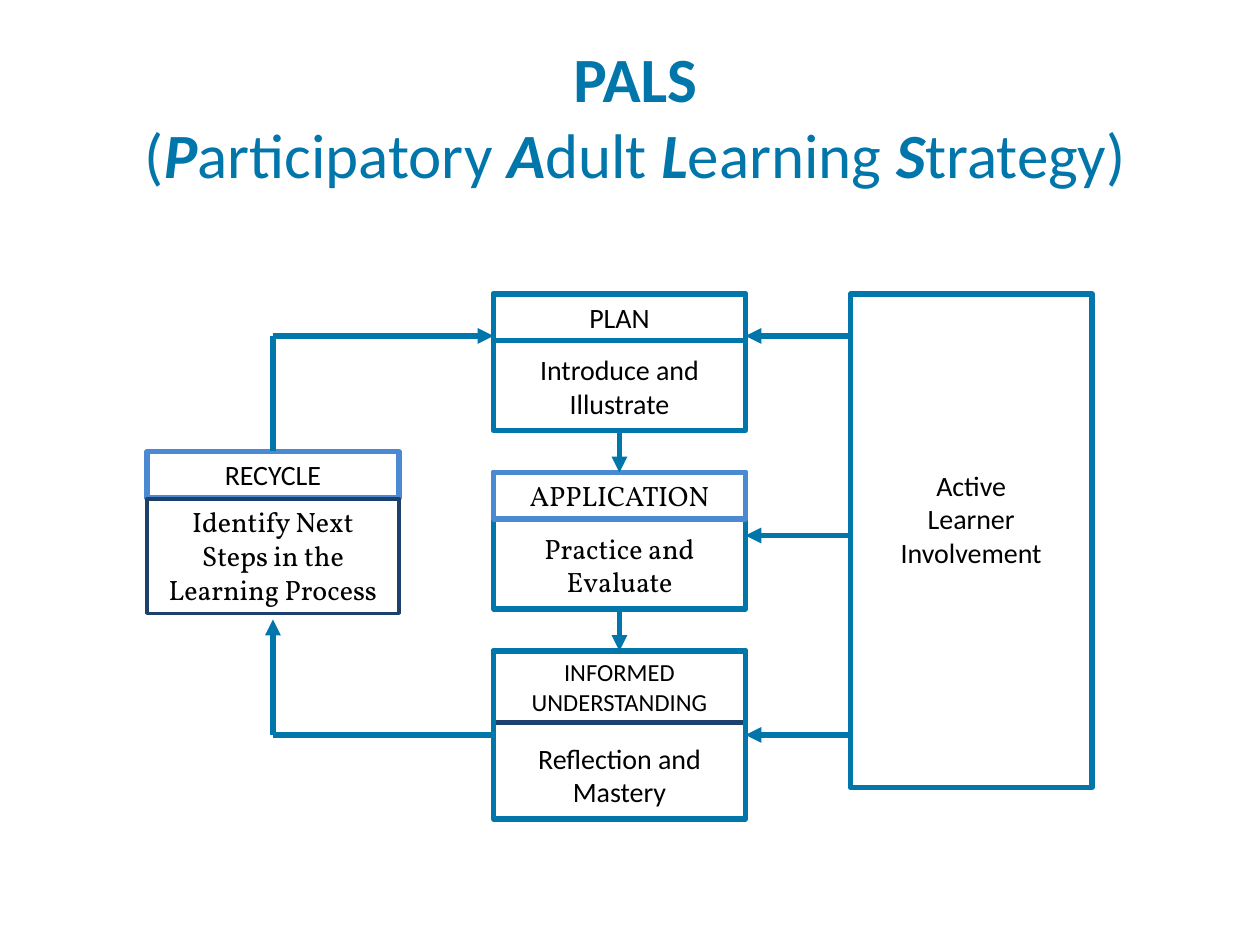
from lxml.etree import SubElement
from pptx import Presentation
from pptx.dml.color import RGBColor
from pptx.enum.shapes import MSO_CONNECTOR as Connector, MSO_SHAPE as Shape
from pptx.enum.text import MSO_ANCHOR as Anchor, PP_ALIGN as Align
from pptx.oxml.ns import qn
from pptx.util import Pt

BLUE = RGBColor(0x00, 0x76, 0xAA)
LIGHT_BLUE = RGBColor(0x4B, 0x8A, 0xD2)
NAVY = RGBColor(0x1B, 0x41, 0x6C)
BLACK = RGBColor(0, 0, 0)

TOP, BOTTOM, LEFT, RIGHT = 0, 2, 1, 3
HEADER_HEIGHT = 26.6
ARROW_LEVELS = (192, 306, 420)


def set_format(target, values):
    for name, value in values.items():
        setattr(target, name, value)


def write(shape, lines, font="Calibri", size=16):
    frame = shape.text_frame
    set_format(frame, {"word_wrap": True, "vertical_anchor": Anchor.TOP})
    for index, line in enumerate(lines):
        para = frame.add_paragraph() if index else frame.paragraphs[0]
        para.alignment = Align.CENTER
        span = para.add_run()
        span.text = line
        set_format(span.font, {"name": font, "size": Pt(size)})
        span.font.color.rgb = BLACK


def add_frame(page, box, color=BLUE, width=3):
    frame = page.shapes.add_shape(Shape.RECTANGLE, *map(Pt, box))
    frame.shadow.inherit = False
    frame.fill.background()
    frame.line.color.rgb = color
    frame.line.width = Pt(width)
    return frame


def add_label(page, box, lines, font="Calibri"):
    label = page.shapes.add_textbox(*map(Pt, box))
    write(label, lines, font)


def add_line(page, start, end, arrow=True, begin=None, finish=None):
    line = page.shapes.add_connector(Connector.STRAIGHT, *map(Pt, start + end))
    line.line.color.rgb = BLUE
    line.line.width = Pt(3)
    if arrow:
        SubElement(line.line._get_or_add_ln(), qn("a:tailEnd"), type="triangle")
    SubElement(line._element.spPr, qn("a:effectLst"))
    if begin:
        line.begin_connect(*begin)
    if finish:
        line.end_connect(*finish)


def add_title(page, box):
    title = page.shapes.title
    sides = ("left", "top", "width", "height")
    set_format(title, dict(zip(sides, map(Pt, box))))
    set_format(title.text_frame, {"word_wrap": True, "vertical_anchor": Anchor.MIDDLE})
    para = title.text_frame.paragraphs[0]
    para.alignment = Align.CENTER

    def add_span(text, bold, italic):
        span = para.add_run()
        span.text = text
        set_format(span.font, {"name": "Calibri", "size": Pt(36),
                               "bold": bold, "italic": italic})
        span.font.color.rgb = BLUE

    add_span("PALS", True, False)
    para.add_line_break()
    add_span("(", False, False)
    for initial, rest in (("P", "articipatory "), ("A", "dult "),
                          ("L", "earning "), ("S", "trategy)")):
        add_span(initial, True, True)
        add_span(rest, False, False)


def add_stage(page, box, heading, text, font="Calibri", color=BLUE,
              header_height=HEADER_HEIGHT, size=16, text_top=30):
    left, top, width, height = box
    header = add_frame(page, (left, top, width, header_height), color)
    write(header, [heading], font, size)
    add_label(page, (left + 12, top + text_top, width - 24, 46), [text], font)
    return header


def add_stages(page, box):
    left, top, width, height = box
    plan_box = (left, top, width, 78)
    application_box = (left, top + 102, width, 78)
    understanding_box = (left, top + 204, width, height - 204)

    plan = add_frame(page, plan_box)
    add_stage(page, plan_box, "PLAN", "Introduce and Illustrate")
    application = add_frame(page, application_box)
    add_stage(page, application_box, "APPLICATION", "Practice and Evaluate",
              "Vollkorn", LIGHT_BLUE)
    add_stage(page, understanding_box, "INFORMED UNDERSTANDING",
              "Reflection and Mastery", color=NAVY, header_height=41,
              size=14, text_top=48)
    understanding = add_frame(page, understanding_box)

    middle = left + width / 2
    for upper, lower, start in ((plan, application, top + 78),
                                (application, understanding, top + 180)):
        add_line(page, (middle, start), (middle, start + 24),
                 begin=(upper, BOTTOM), finish=(lower, TOP))
    return understanding


def add_recycle(page, box):
    left, top, width, height = box
    header = add_frame(page, (left, top, width, HEADER_HEIGHT), LIGHT_BLUE)
    write(header, ["RECYCLE"])
    body = add_frame(page, (left, top + 27, width, height - 27), NAVY, 2)
    write(body, ["Identify Next Steps in the Learning Process"], "Vollkorn")
    return header


def add_involvement(page, box, stage_right, understanding):
    left, top, width, height = box
    add_frame(page, box)
    add_label(page, (left, top + 96, width, 66), ["Active", "Learner Involvement"])
    for level in ARROW_LEVELS:
        joint = (understanding, RIGHT) if level == ARROW_LEVELS[-1] else None
        add_line(page, (left, level), (stage_right, level), finish=joint)


def add_cycle_lines(page, recycle_box, stage_left, recycle, understanding):
    left, top, width, height = recycle_box
    middle = left + width / 2
    upper, _, lower = ARROW_LEVELS
    add_line(page, (stage_left, lower), (middle, lower), False,
             begin=(understanding, LEFT))
    add_line(page, (middle, lower), (middle, top + height + 3.5))
    add_line(page, (middle, top), (middle, upper), False, begin=(recycle, TOP))
    add_line(page, (middle, upper), (stage_left, upper))


def main():
    deck = Presentation()
    set_format(deck, {"slide_width": Pt(720), "slide_height": Pt(540)})
    page = deck.slides.add_slide(deck.slide_layouts[5])
    stages_box = (282, 168, 144, 300)
    recycle_box = (84, 258, 144, 92.5)

    add_title(page, (18, 18, 690, 96))
    understanding = add_stages(page, stages_box)
    recycle = add_recycle(page, recycle_box)
    add_involvement(page, (486, 168, 138, 282),
                    stages_box[0] + stages_box[2], understanding)
    add_cycle_lines(page, recycle_box, stages_box[0], recycle, understanding)
    deck.save("out.pptx")


if __name__ == "__main__":
    main()
